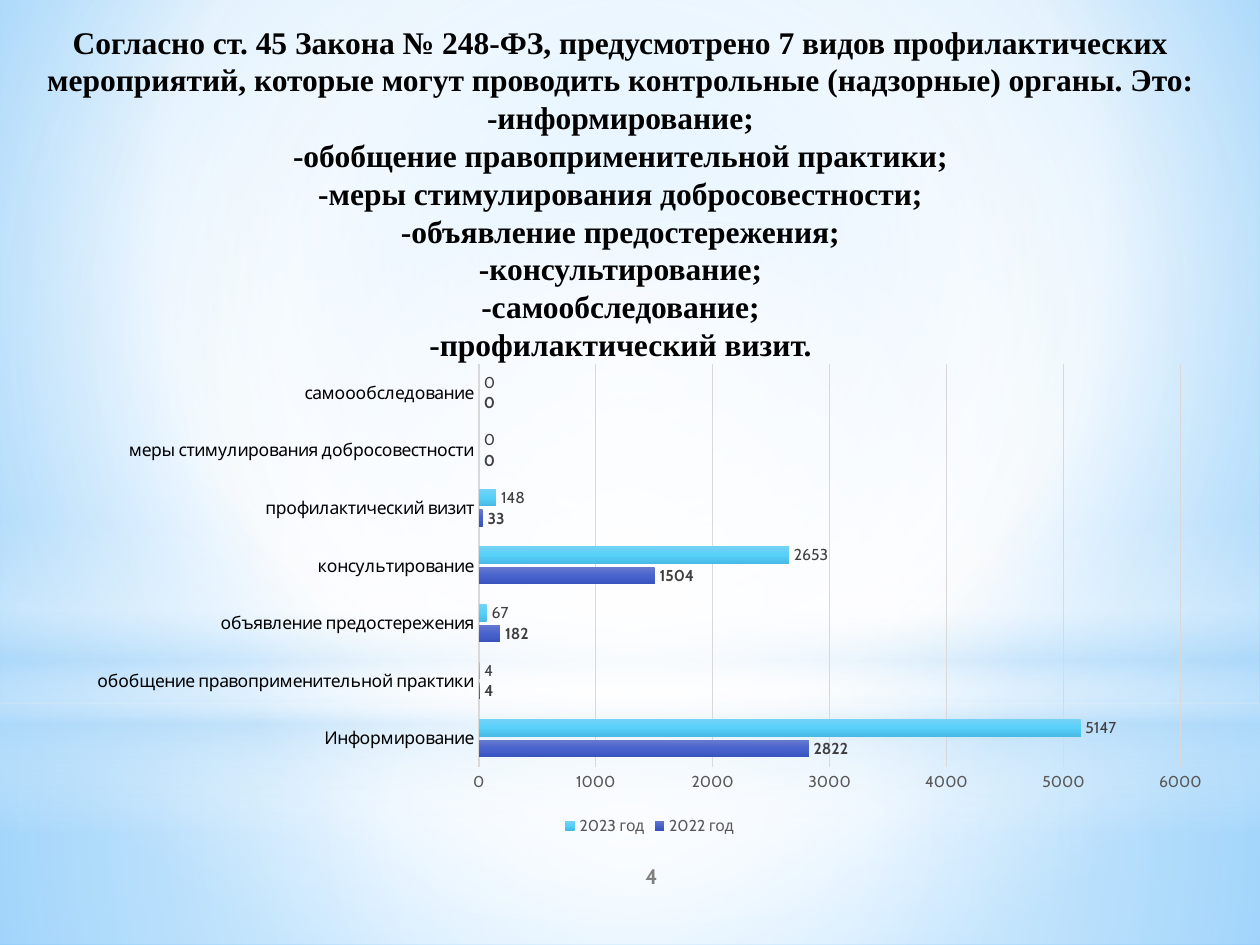
from lxml import etree
from pptx import Presentation
from pptx.chart.data import CategoryChartData
from pptx.dml.color import RGBColor
from pptx.enum.chart import XL_CHART_TYPE, XL_LABEL_POSITION, XL_LEGEND_POSITION, XL_TICK_MARK
from pptx.enum.shapes import MSO_SHAPE
from pptx.enum.text import MSO_ANCHOR, MSO_AUTO_SIZE, PP_ALIGN
from pptx.util import Inches, Pt

RECTANGLE, OVAL = MSO_SHAPE.RECTANGLE, MSO_SHAPE.OVAL
CENTER = PP_ALIGN.CENTER
NO_TICK = XL_TICK_MARK.NONE
DRAWING = "http://schemas.openxmlformats.org/drawingml/2006/main"
COLORS = {
    "white": "FFFFFF", "pale": "B4DCFA", "sky": "9ED5FF", "deep sky": "5BB9FF",
    "black": "000000", "number": "808080", "label": "404040",
    "axis text": "595959", "grid": "D9D9D9",
}


def set_font(font, name, size, color, bold=False):
    font.name, font.size, font.bold = name, Pt(size), bold
    font.color.rgb = RGBColor.from_string(COLORS[color])


def set_gradient(fill, element, stops, center=None):
    """Stops are (position, hex, opacity); without a center the fill runs downwards."""
    fill.background()
    stop_xml = "".join(
        f'<a:gs pos="{position * 1000}"><a:srgbClr val="{color}">'
        f'<a:alpha val="{opacity * 1000}"/></a:srgbClr></a:gs>'
        for position, color, opacity in stops)
    if center:
        sides = " ".join(f'{side}="{value * 1000}"' for side, value in zip("ltrb", center))
        direction = f'<a:path path="circle"><a:fillToRect {sides}/></a:path>'
    else:
        direction = '<a:lin ang="5400000" scaled="0"/>'
    gradient = etree.fromstring(
        f'<a:gradFill xmlns:a="{DRAWING}" rotWithShape="1">'
        f'<a:gsLst>{stop_xml}</a:gsLst>{direction}</a:gradFill>')
    empty_fill = element.xpath(".//a:noFill")[0]
    empty_fill.getparent().replace(empty_fill, gradient)


presentation = Presentation()
presentation.slide_width, presentation.slide_height = Inches(10), Inches(7.5)
slide = presentation.slides.add_slide(presentation.slide_layouts[5])
white, pale = COLORS["white"], COLORS["pale"]

# Background
set_gradient(slide.background.fill, slide.background._cSld,
             [(0, COLORS["sky"], 100), (60, white, 100), (100, COLORS["deep sky"], 100)],
             (20, 10, 20, 60))

# Sky and horizon layers: shape, top, height, stops, center
middle = (50, 50, 50, 50)
layers = [
    (RECTANGLE, 5.58, 1.92, [(0, white, 91), (37, white, 76), (100, pale, 79)], middle),
    (RECTANGLE, 0, 5.58, [(0, white, 89), (48, white, 62), (100, pale, 79)], middle),
    (RECTANGLE, 4.12, 2.5, [(0, white, 0), (29, white, 30), (45, pale, 40),
                            (55, white, 26), (65, pale, 60), (100, white, 0)], None),
    (OVAL, 1.75, 5.58, [(0, white, 100), (56, white, 0)], middle),
]
for kind, top, height, stops, center in layers:
    shape = slide.shapes.add_shape(kind, 0, Inches(top), Inches(10), Inches(height))
    shape.shadow.inherit = False
    set_gradient(shape.fill, shape._element, stops, center)
    shape.line.fill.background()

# Slide number
number_box = slide.shapes.add_textbox(Inches(4.17), Inches(6.75), Inches(2), Inches(0.4))
number_box.text_frame.word_wrap = True
number_box.text_frame.vertical_anchor = MSO_ANCHOR.MIDDLE
paragraph = number_box.text_frame.paragraphs[0]
paragraph.text = "4"
paragraph.alignment = CENTER
set_font(paragraph.font, "Cabin", 12, "number", True)

# Title, brought in front of the background layers
title = slide.shapes.title
slide.shapes._spTree.append(title._element)
title.left, title.top = Inches(0.12), Inches(0.13)
title.width, title.height = Inches(9.61), Inches(2.83)
frame = title.text_frame
frame.word_wrap = True
frame.auto_size = MSO_AUTO_SIZE.SHAPE_TO_FIT_TEXT
frame.vertical_anchor = MSO_ANCHOR.TOP
frame.text = "\n".join([
    "Согласно ст. 45 Закона № 248-ФЗ, предусмотрено 7 видов профилактических "
    "мероприятий, которые могут проводить контрольные (надзорные) органы. Это:",
    "-информирование;",
    "-обобщение правоприменительной практики;",
    "-меры стимулирования добросовестности;",
    "-объявление предостережения;",
    "-консультирование;",
    "-самообследование;",
    "-профилактический визит.",
])
for paragraph in frame.paragraphs:
    paragraph.alignment = CENTER
    set_font(paragraph.font, "Times New Roman", 18, "black", True)

# Chart
chart_data = CategoryChartData()
chart_data.categories = [
    "Информирование", "обобщение правоприменительной практики",
    "объявление предостережения", "консультирование", "профилактический визит",
    "меры стимулирования добросовестности", "самоообследование",
]
chart_data.add_series("2022 год", (2822, 4, 182, 1504, 33, 0, 0))
chart_data.add_series("2023 год", (5147, 4, 67, 2653, 148, 0, 0))
chart = slide.shapes.add_chart(
    XL_CHART_TYPE.BAR_CLUSTERED, Inches(0.59), Inches(2.81), Inches(9.13), Inches(3.86),
    chart_data).chart
chart.has_title = False
set_font(chart.font, "Cabin", 10, "black")

# Bars and their labels
plot = chart.plots[0]
plot.gap_width, plot.overlap, plot.vary_by_categories = 115, -20, False
bar_styles = [(("687ACF", "4863CE", "3954BE"), True), (("74D2F6", "57D0FA", "47BBE5"), False)]
for series, (shades, bold) in zip(plot.series, bar_styles):
    stops = [(position, shade, 100) for position, shade in zip((0, 50, 100), shades)]
    set_gradient(series.format.fill, series._element, stops)
    series.invert_if_negative = False
    labels = series.data_labels
    labels.show_value = True
    labels.position = XL_LABEL_POSITION.OUTSIDE_END
    set_font(labels.font, "Cabin", 9, "label", bold)

# Axes
grid_color = RGBColor.from_string(COLORS["grid"])
category_axis, value_axis = chart.category_axis, chart.value_axis
for axis in (category_axis, value_axis):
    axis.major_tick_mark = axis.minor_tick_mark = NO_TICK
set_font(category_axis.tick_labels.font, "Cabin", 10, "black")
category_axis.format.line.color.rgb = grid_color
category_axis.format.line.width = Pt(1)
set_font(value_axis.tick_labels.font, "Cabin", 9, "axis text")
value_axis.format.line.fill.background()
value_axis.has_major_gridlines = True
value_axis.major_gridlines.format.line.color.rgb = grid_color
value_axis.major_gridlines.format.line.width = Pt(0.75)

# Legend
chart.has_legend = True
chart.legend.position = XL_LEGEND_POSITION.BOTTOM
chart.legend.include_in_layout = False
set_font(chart.legend.font, "Cabin", 9, "axis text")

presentation.save("out.pptx")
